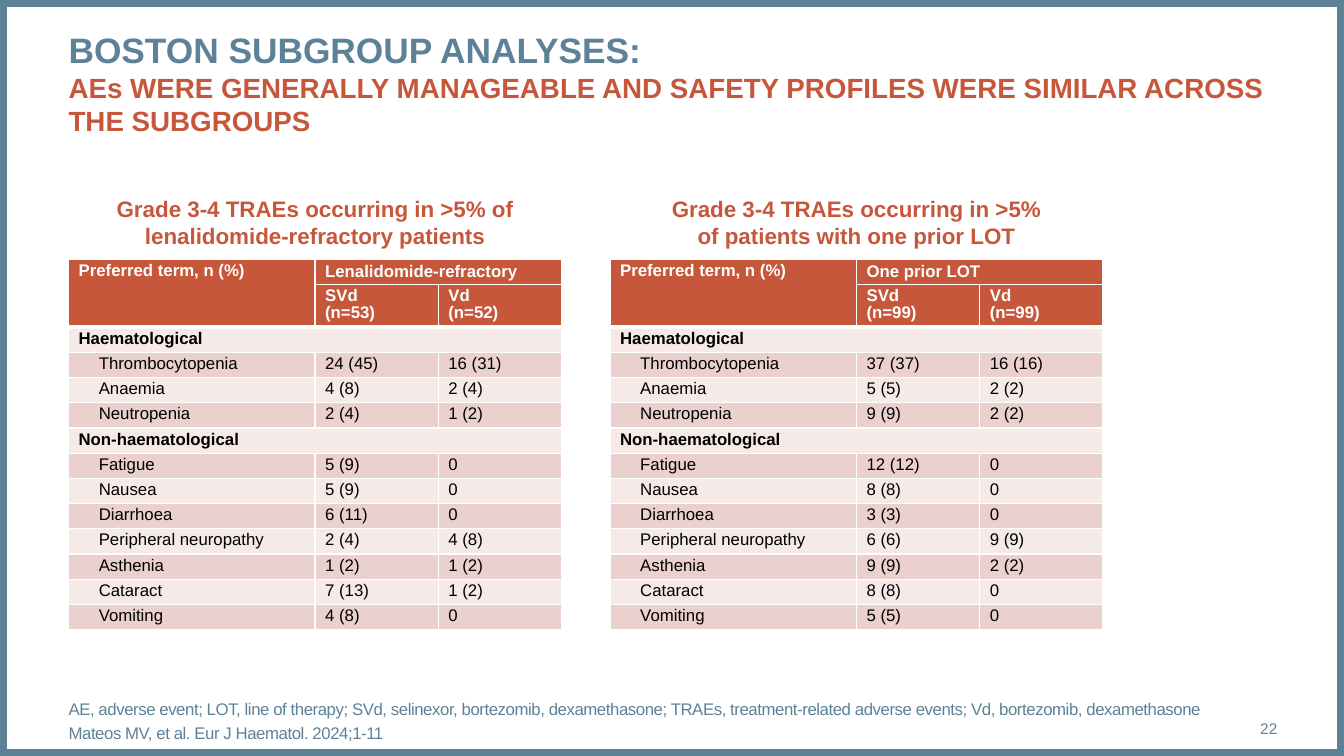
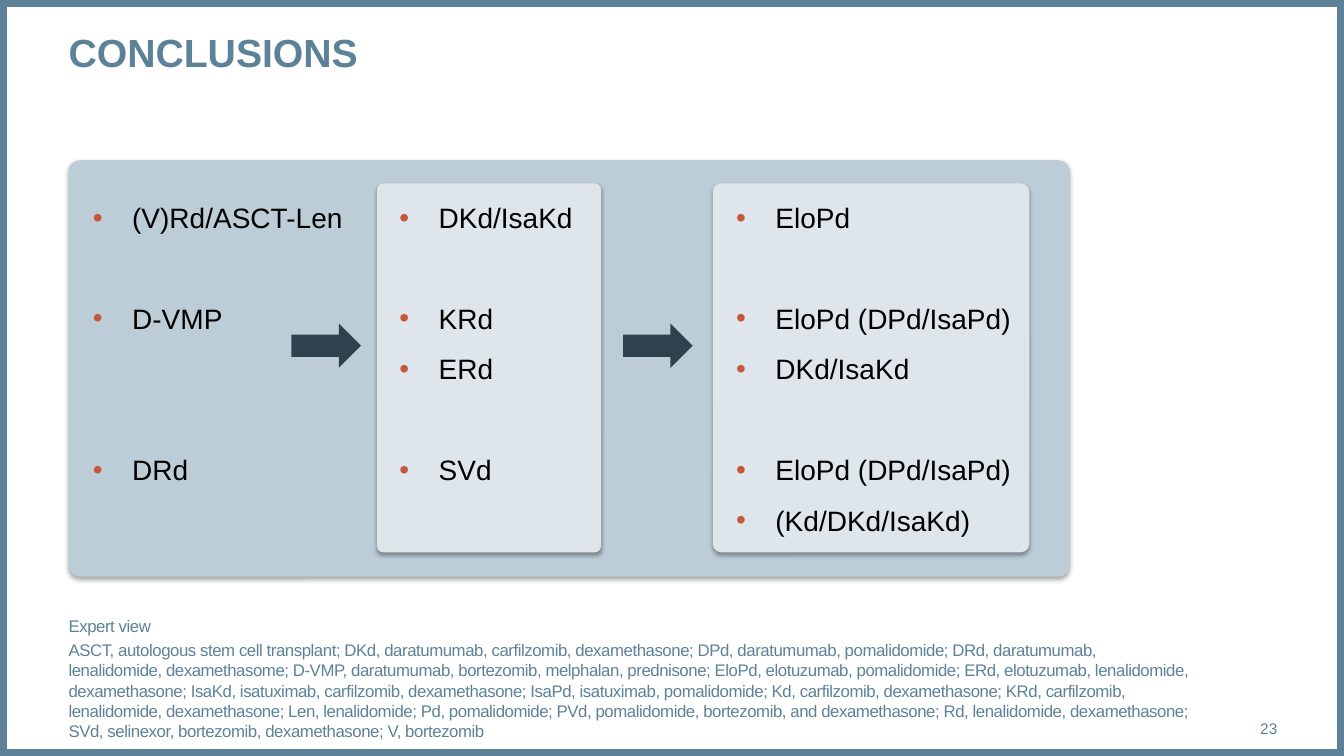
from dataclasses import dataclass

from lxml import etree
from pptx import Presentation
from pptx.dml.color import RGBColor
from pptx.enum.shapes import MSO_SHAPE
from pptx.enum.text import MSO_ANCHOR, MSO_AUTO_SIZE, PP_ALIGN
from pptx.oxml.ns import qn
from pptx.util import Inches, Pt

LEFT, MID, RIGHT = PP_ALIGN.LEFT, PP_ALIGN.CENTER, PP_ALIGN.RIGHT
TOP, CENTRE, BASE = MSO_ANCHOR.TOP, MSO_ANCHOR.MIDDLE, MSO_ANCHOR.BOTTOM
RECT, ROUND, ARROW = MSO_SHAPE.RECTANGLE, MSO_SHAPE.ROUNDED_RECTANGLE, MSO_SHAPE.RIGHT_ARROW


@dataclass(frozen=True)
class Theme:
    font: str = "Arial"
    blue: str = "5D8298"
    rust: str = "C6573B"
    black: str = "000000"
    white: str = "FFFFFF"
    pale: str = "F5EAE8"
    tint: str = "EAD1CE"
    panel: str = "BDCDD7"
    card: str = "DEE6EB"
    dark: str = "2E414C"
    title: float = 28
    lead: float = 25.2
    sub: float = 19.8
    list: float = 20
    head: float = 16
    small: float = 12
    page: float = 11


T = Theme()
WIDE, HIGH, EDGE = 13.33, 7.5, 0.68
COL, GAP = 4.89, 0.48
STEP = 36  # points from one list row to the next


def place(shape, box, anchor=TOP):
    """Set a text shape's box in inches and clear its insets; return its frame."""
    shape.left, shape.top, shape.width, shape.height = map(Inches, box)
    frame = shape.text_frame
    frame.margin_left = frame.margin_right = frame.margin_top = frame.margin_bottom = 0
    frame.auto_size, frame.word_wrap = MSO_AUTO_SIZE.NONE, True
    frame.vertical_anchor = anchor
    return frame


def write(par, runs, align=LEFT, before=0, line=1.0, indent=0, bullet=False, track=0):
    """Fill a paragraph with (text, size, colour, bold) runs; indent in inches."""
    props = par._p.get_or_add_pPr()
    props.set("marL", str(Inches(indent)))
    props.set("indent", str(-Inches(indent) if bullet else 0))
    if bullet:
        tone = etree.SubElement(props, qn("a:buClr"))
        etree.SubElement(tone, qn("a:srgbClr"), val=T.rust)
        etree.SubElement(props, qn("a:buFont"), typeface=T.font)
        etree.SubElement(props, qn("a:buChar"), char="•")
    else:
        etree.SubElement(props, qn("a:buNone"))
    par.alignment, par.line_spacing = align, line
    par.space_before, par.space_after = Pt(before), Pt(0)
    for text, size, tone, bold in runs:
        for n, part in enumerate(text.split("\n")):
            if n:
                par.add_line_break()
            run = par.add_run()
            run.text = part
            run.font.name, run.font.size, run.font.bold = T.font, Pt(size), bold
            run.font.color.rgb = RGBColor.from_string(tone)
            if track:
                run.font._element.set("spc", str(track))


prs = Presentation()
prs.slide_width, prs.slide_height = Inches(WIDE), Inches(HIGH)
layout = prs.slide_layouts.get_by_name("Comparison")

# Shared parts: title, footer, page number
pages = [
    ([("BOSTON SUBGROUP ANALYSES:\n", T.lead, T.blue, True),
      ("AEs WERE GENERALLY MANAGEABLE AND SAFETY PROFILES WERE SIMILAR ACROSS THE SUBGROUPS",
       T.sub, T.rust, True)],
     11.42, CENTRE,
     ["AE, adverse event; LOT, line of therapy; SVd, selinexor, bortezomib, dexamethasone; "
      "TRAEs, treatment-related adverse events; Vd, bortezomib, dexamethasone",
      "Mateos MV, et al. Eur J Haematol. 2024;1-11"]),
    ([("CONCLUSIONS", T.title, T.blue, True)],
     11.13, BASE,
     ["Expert view",
      "ASCT, autologous stem cell transplant; DKd, daratumumab, carfilzomib, dexamethasone; "
      "DPd, daratumumab, pomalidomide; DRd, daratumumab, lenalidomide, dexamethasome; "
      "D-VMP, daratumumab, bortezomib, melphalan, prednisone; EloPd, elotuzumab, pomalidomide; "
      "ERd, elotuzumab, lenalidomide, dexamethasone; IsaKd, isatuximab, carfilzomib, "
      "dexamethasone; IsaPd, isatuximab, pomalidomide; Kd, carfilzomib, dexamethasone; "
      "KRd, carfilzomib, lenalidomide, dexamethasone; Len, lenalidomide; Pd, pomalidomide; "
      "PVd, pomalidomide, bortezomib, and dexamethasone; Rd, lenalidomide, dexamethasone; "
      "SVd, selinexor, bortezomib, dexamethasone; V, bortezomib"]),
]
slides = []
for num, (title, width, anchor, notes) in enumerate(pages, 22):
    slide = prs.slides.add_slide(layout)
    slides.append(slide)
    frame = place(slide.shapes.title, (EDGE, 0.28, WIDE - 2 * EDGE, 0.95))
    write(frame.paragraphs[0], title)

    frame = place(slide.placeholders[1], (EDGE, 6.95, width, 0.4), anchor)
    for n, note in enumerate(notes):
        par = frame.add_paragraph() if n else frame.paragraphs[0]
        write(par, [(note, T.small, T.blue, False)], before=3 if n else 0, track=-30)

    box = slide.shapes.add_textbox(0, 0, 0, 0)
    par = place(box, (11.81, 7.03, 0.86, 0.4), CENTRE).paragraphs[0]
    write(par, [(str(num), T.page, T.blue, False)], align=RIGHT)
    run = par.runs[0]._r
    field = etree.Element(qn("a:fld"), type="slidenum",
                          id="{B6F15528-21DE-4FAA-801E-634DDDAF4B2B}")
    run.addprevious(field)
    field.extend(list(run))
    par._p.remove(run)

# Numbering starts at 22
prs.element.set("firstSlideNum", "22")

# Frame around every slide, kept on the master
border = slides[0].shapes.add_shape(RECT, 0, 0, prs.slide_width, prs.slide_height)
border.shadow.inherit = False
border.fill.background()
border.line.color.rgb = RGBColor.from_string(T.blue)
border.line.width = Pt(10)
prs.slide_master.shapes.element.insert(2, border.element)

# Safety tables
terms = ["Haematological", "Thrombocytopenia", "Anaemia", "Neutropenia",
         "Non-haematological", "Fatigue", "Nausea", "Diarrhoea",
         "Peripheral neuropathy", "Asthenia", "Cataract", "Vomiting"]
groups = [
    (2, "Grade 3-4 TRAEs occurring in >5% of lenalidomide-refractory patients",
     "Lenalidomide-refractory", "SVd\n(n=53)", "Vd\n(n=52)",
     ["", "24 (45)", "4 (8)", "2 (4)", "", "5 (9)", "5 (9)", "6 (11)",
      "2 (4)", "1 (2)", "7 (13)", "4 (8)"],
     ["", "16 (31)", "2 (4)", "1 (2)", "", "0", "0", "0", "4 (8)", "1 (2)", "1 (2)", "0"]),
    (3, "Grade 3-4 TRAEs occurring in >5%\nof patients with one prior LOT",
     "One prior LOT", "SVd\n(n=99)", "Vd\n(n=99)",
     ["", "37 (37)", "5 (5)", "9 (9)", "", "12 (12)", "8 (8)", "3 (3)",
      "6 (6)", "9 (9)", "8 (8)", "5 (5)"],
     ["", "16 (16)", "2 (2)", "2 (2)", "", "0", "0", "0", "9 (9)", "2 (2)", "0", "0"]),
]
slide = slides[0]
for n, (idx, head, group, arm, ctrl, left, right) in enumerate(groups):
    x = EDGE + n * (COL + GAP)
    frame = place(slide.placeholders[idx], (x, 1.94, COL, 0.63))
    write(frame.paragraphs[0], [(head, T.head, T.rust, True)], align=MID)

    rows = [("Preferred term, n (%)", group, ""), ("", arm, ctrl), *zip(terms, left, right)]
    grid = slide.shapes.add_table(len(rows), 3, Inches(x), Inches(2.57),
                                  Inches(COL), Inches(0.25 * len(rows))).table
    grid.first_row = grid.horz_banding = False
    for c, share in enumerate((2, 1, 1)):
        grid.columns[c].width = Inches(COL * share / 4)
    for r, row in enumerate(rows):
        grid.rows[r].height = Inches(0.42 if r == 1 else 0.25)
        top = r < 2
        part = not top and not row[1]
        for c, text in enumerate(row):
            cell = grid.cell(r, c)
            cell.margin_top = cell.margin_bottom = Pt(2.5)
            cell.margin_left = cell.margin_right = Inches(0.1)
            props = cell._tc.get_or_add_tcPr()
            for side in "LRTB":
                thick = (r, side) in ((1, "B"), (2, "T")) or (r, c, side) == (0, 0, "B")
                edge = etree.SubElement(props, qn("a:ln" + side), w=str(Pt(3 if thick else 1)))
                fill = etree.SubElement(edge, qn("a:solidFill"))
                etree.SubElement(fill, qn("a:srgbClr"), val=T.white)
            cell.fill.solid()
            tone = T.rust if top else T.tint if r % 2 else T.pale
            cell.fill.fore_color.rgb = RGBColor.from_string(tone)
            if text:
                write(cell.text_frame.paragraphs[0],
                      [(text, T.small, T.white if top else T.black, top or part)],
                      line=1.0 if (r, c) == (0, 1) else 0.9,
                      indent=0 if top or part or c else 0.2)
        if part:
            grid.cell(r, 0).merge(grid.cell(r, 2))
    grid.cell(0, 0).merge(grid.cell(1, 0))
    grid.cell(0, 1).merge(grid.cell(0, 2))
spare = slide.placeholders[4].element
spare.getparent().remove(spare)

# Treatment sequence: panel and cards go behind the lists
slide = slides[1]
cards = [(EDGE, 1.59, 9.93, 4.13, T.panel),
         (3.74, 1.82, 2.22, 3.66, T.card),
         (7.07, 1.82, 3.14, 3.66, T.card)]
for n, (*box, tone) in enumerate(cards):
    card = slide.shapes.add_shape(ROUND, *map(Inches, box))
    card.adjustments[0] = 0.027
    card.fill.solid()
    card.fill.fore_color.rgb = RGBColor.from_string(tone)
    card.line.fill.background()
    card.shadow.inherit = False
    glow = etree.SubElement(card.element.spPr.find(qn("a:effectLst")), qn("a:outerShdw"),
                            blurRad=str(Pt(3.1)), dist=str(Pt(1.8)), dir="5400000",
                            algn="t", rotWithShape="0")
    shade = etree.SubElement(glow, qn("a:srgbClr"), val=T.black)
    etree.SubElement(shade, qn("a:alpha"), val="35000")
    slide.shapes.element.insert(2 + n, card.element)

# Each entry is (row, text)
lists = [
    (2, 0.92, 4.65, [(0, "(V)Rd/ASCT-Len"), (2, "D-VMP"), (5, "DRd")]),
    (3, 3.96, 3.49, [(0, "DKd/IsaKd"), (2, "KRd"), (3, "ERd"), (5, "SVd")]),
    (4, 7.3, 3.49, [(0, "EloPd"), (2, "EloPd (DPd/IsaPd)"), (3, "DKd/IsaKd"),
                    (5, "EloPd (DPd/IsaPd)"), (6, "(Kd/DKd/IsaKd)")]),
]
for idx, x, high, items in lists:
    frame = place(slide.placeholders[idx], (x, 1.99, 2.91, high))
    last = 0
    for row, text in items:
        par = frame.add_paragraph() if row else frame.paragraphs[0]
        write(par, [(text, T.list, T.black, False)], indent=0.39, bullet=True,
              before=12 + (row - last - 1) * STEP if row else 0)
        last = row

for x in (2.89, 6.18):
    arrow = slide.shapes.add_shape(ARROW, *map(Inches, (x, 3.21, 0.69, 0.44)))
    arrow.shadow.inherit = False
    arrow.fill.solid()
    arrow.fill.fore_color.rgb = RGBColor.from_string(T.dark)
    arrow.line.fill.background()

prs.save("out.pptx")
